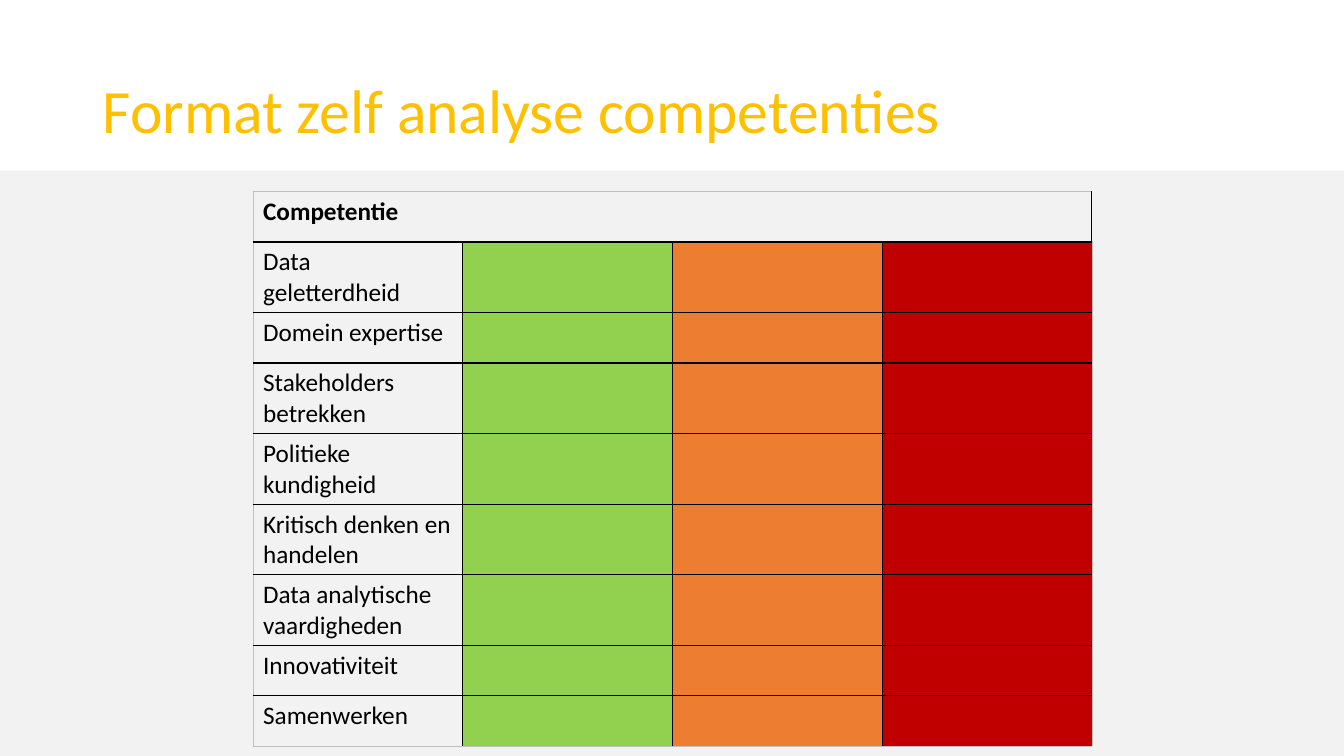
from pptx import Presentation
from pptx.dml.color import RGBColor
from pptx.enum.shapes import MSO_SHAPE
from pptx.enum.text import MSO_ANCHOR
from pptx.oxml.ns import qn
from pptx.util import Inches, Pt
from lxml import etree

RECT = MSO_SHAPE.RECTANGLE
MIDDLE = MSO_ANCHOR.MIDDLE
TOP = MSO_ANCHOR.TOP

TITLE = "Format zelf analyse competenties"
HEAD = "Competentie"
SKILLS = [
    "Data geletterdheid",
    "Domein expertise",
    "Stakeholders betrekken",
    "Politieke kundigheid",
    "Kritisch denken en handelen",
    "Data analytische vaardigheden",
    "Innovativiteit",
    "Samenwerken",
]
LEVELS = ["92D050", "ED7D31", "C00000"]
WIDE, HIGH = 13.33, 7.5
COL, ROW = 2.08, 0.5


def color(code):
    return RGBColor.from_string(code)


def write(frame, text, size=18, ink="000000", bold=False, anchor=TOP, line=1.0):
    frame.word_wrap = True
    frame.vertical_anchor = anchor
    para = frame.paragraphs[0]
    para.line_spacing = line
    run = para.add_run()
    run.text = text
    run.font.name = "Calibri"
    run.font.size = Pt(size)
    run.font.bold = bold
    run.font.color.rgb = color(ink)


def border(cell, side, ink, width):
    props = cell._tc.get_or_add_tcPr()
    line = etree.SubElement(props, qn("a:ln" + side), w=str(Pt(width)))
    fill = etree.SubElement(line, qn("a:solidFill"))
    etree.SubElement(fill, qn("a:srgbClr"), val=ink)


def main():
    deck = Presentation()
    deck.slide_width, deck.slide_height = Inches(WIDE), Inches(HIGH)
    slide = deck.slides.add_slide(deck.slide_layouts[6])
    shapes = slide.shapes

    band = shapes.add_shape(RECT, 0, Inches(1.69), Inches(WIDE), Inches(HIGH - 1.69))
    band.shadow.inherit = False
    band.fill.solid()
    band.fill.fore_color.rgb = color("F2F2F2")
    band.line.fill.background()

    title = shapes.add_textbox(Inches(0.92), Inches(0.4), Inches(11.5), Inches(1.45))
    write(title.text_frame, TITLE, size=44, ink="FFC000", anchor=MIDDLE, line=0.9)

    rows, cols = len(SKILLS) + 1, len(LEVELS) + 1
    table = shapes.add_table(rows, cols, Inches(2.51), Inches(1.9),
                             Inches(cols * COL), Inches(rows * ROW)).table
    table.first_row = table.horz_banding = False
    for col in table.columns:
        col.width = Inches(COL)
    for row in table.rows:
        row.height = Inches(ROW)

    for r in range(rows):
        for c in range(cols):
            cell = table.cell(r, c)
            edges = {"L": c == 0, "R": c == cols - 1, "T": r == 0, "B": r == rows - 1}
            for side, outer in edges.items():
                border(cell, side, "BFBFBF" if outer else "000000", 0.5 if outer else 1)
            if r and c:
                cell.fill.solid()
                cell.fill.fore_color.rgb = color(LEVELS[c - 1])
            else:
                cell.fill.background()

    table.cell(0, 0).merge(table.cell(0, cols - 1))
    for r, text in enumerate([HEAD] + SKILLS):
        write(table.cell(r, 0).text_frame, text, bold=r == 0)

    deck.save("out.pptx")


if __name__ == "__main__":
    main()
